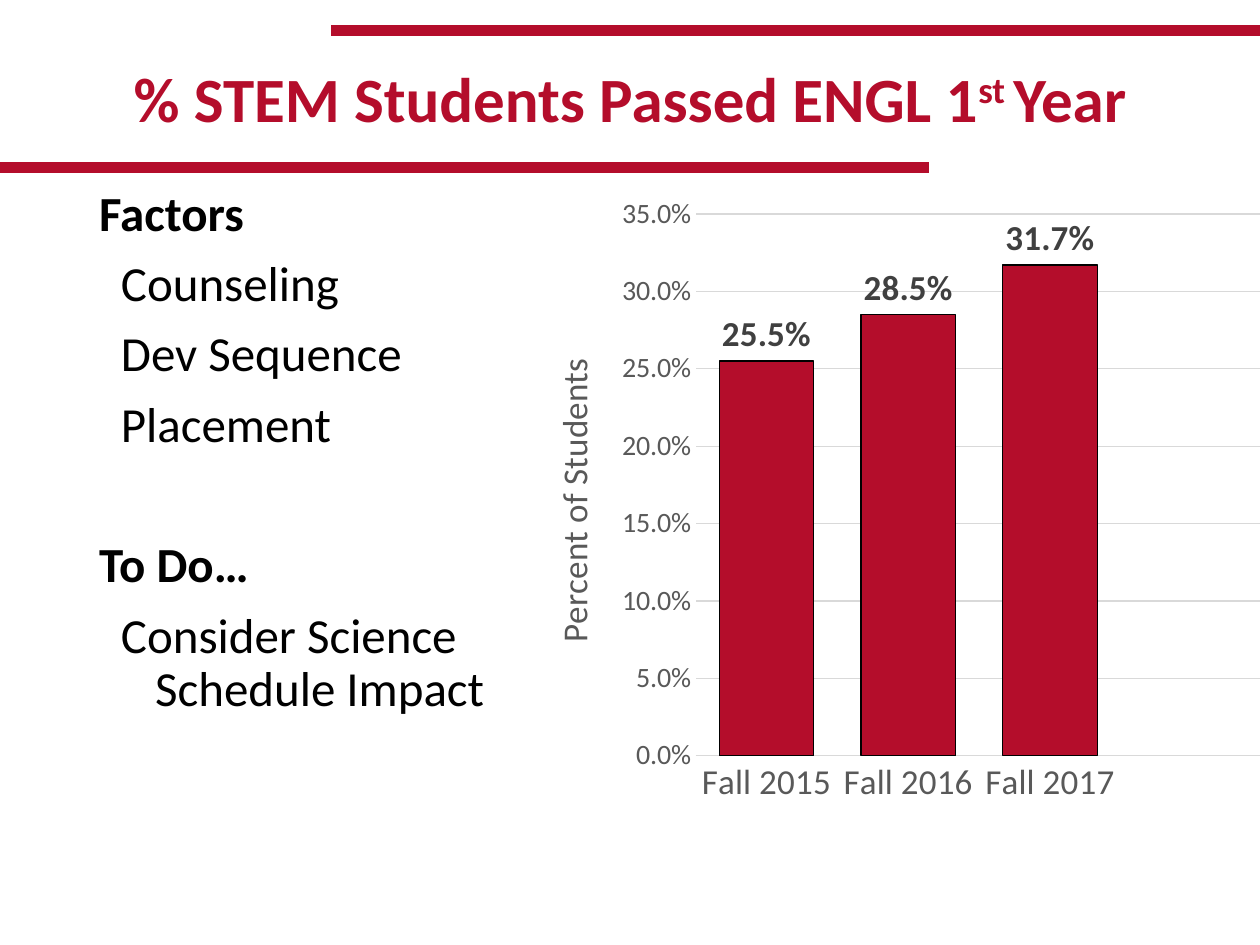
"""Build the slide on STEM students who passed English in their first year."""
from lxml import etree
from pptx import Presentation
from pptx import util as u
from pptx.chart import data
from pptx.dml import color
from pptx.enum import chart as ch, shapes, text
from pptx.oxml import ns

COLORS = {"red": "B40D2B", "black": "000000", "axis": "595959",
          "grid": "D9D9D9", "label": "404040"}


class Deck:
    FONT = "Calibri"

    def __init__(self, prs):
        self.prs = prs
        self.s = prs.slides.add_slide(prs.slide_layouts[5])

    def rgb(self, name):
        return color.RGBColor.from_string(COLORS[name])

    def set_all(self, target, **values):
        for name, value in values.items():
            setattr(target, name, value)

    def box(self, *lengths):
        return dict(zip(("left", "top", "width", "height"), map(u.Cm, lengths)))

    def font(self, f, size, name, bold=False):
        self.set_all(f, size=u.Pt(size), name=self.FONT, bold=bold)
        f.color.rgb = self.rgb(name)

    def line(self, ln, name, width):
        ln.color.rgb = self.rgb(name)
        ln.width = u.Pt(width)

    def frame(self, tf, anchor):
        self.set_all(tf, word_wrap=True, auto_size=text.MSO_AUTO_SIZE.NONE,
                     vertical_anchor=anchor)

    def bar(self, x1, x2, y):
        c = self.s.shapes.add_connector(shapes.MSO_CONNECTOR.STRAIGHT,
                                        *map(u.Cm, (x1, y, x2, y)))
        self.line(c.line, "red", 6)
        etree.SubElement(c._element.spPr, ns.qn("a:effectLst"))

    def title(self, runs, *lengths):
        sp = self.s.shapes.title
        self.set_all(sp, **self.box(*lengths))
        tf = sp.text_frame
        self.frame(tf, text.MSO_ANCHOR.MIDDLE)
        p = tf.paragraphs[0]
        self.set_all(p, alignment=text.PP_ALIGN.CENTER, line_spacing=0.9)
        for words, baseline in runs:
            r = p.add_run()
            r.text = words
            self.font(r.font, 36, "red", True)
            r._r.get_or_add_rPr().set("baseline", str(baseline))

    def outline(self, sections, *lengths):
        tf = self.s.shapes.add_textbox(**self.box(*lengths)).text_frame
        self.frame(tf, text.MSO_ANCHOR.TOP)
        p = tf.paragraphs[0]
        for i, (heading, items) in enumerate(sections):
            for j, words in enumerate([heading, *items]):
                if i or j:
                    p = tf.add_paragraph()
                p.text = words
                new_section = i and not j
                self.set_all(p, line_spacing=0.9,
                             space_before=u.Pt(50 if new_section else 10))
                self.font(p.font, 28, "black", not j)
                for r in p.runs:
                    self.font(r.font, 28, "black", not j)
                if j:
                    pPr = p._p.get_or_add_pPr()
                    pPr.set("marL", str(u.Cm(1.13)))
                    pPr.set("indent", str(u.Cm(-0.69)))

    def columns(self, categories, values, axis_title, *lengths):
        cd = data.CategoryChartData(number_format="0.0%")
        cd.categories = categories
        cd.add_series("Series 1", values)
        chart = self.s.shapes.add_chart(ch.XL_CHART_TYPE.COLUMN_CLUSTERED,
                                        chart_data=cd, **dict(zip(
                                            ("x", "y", "cx", "cy"),
                                            map(u.Cm, lengths)))).chart
        self.set_all(chart, has_legend=False, has_title=False)
        self.font(chart.font, 10, "black")
        plot = chart.plots[0]
        self.set_all(plot, gap_width=50, overlap=-6, vary_by_categories=False,
                     has_data_labels=True)
        self.set_all(plot.data_labels, show_value=True, number_format="0.0%",
                     number_format_is_linked=False,
                     position=ch.XL_LABEL_POSITION.OUTSIDE_END)
        self.font(plot.data_labels.font, 20, "label", True)
        fmt = plot.series[0].format
        fmt.fill.solid()
        fmt.fill.fore_color.rgb = self.rgb("red")
        self.line(fmt.line, "black", 0.75)
        cat, val = chart.category_axis, chart.value_axis
        for axis, size in ((cat, 20), (val, 16)):
            self.set_all(axis, major_tick_mark=ch.XL_TICK_MARK.NONE,
                         minor_tick_mark=ch.XL_TICK_MARK.NONE)
            self.font(axis.tick_labels.font, size, "axis")
        self.line(cat.format.line, "grid", 0.75)
        self.set_all(val, minimum_scale=0, maximum_scale=0.35, major_unit=0.05,
                     has_major_gridlines=True)
        self.set_all(val.tick_labels, number_format="0.0%",
                     number_format_is_linked=False)
        val.format.line.fill.background()
        self.line(val.major_gridlines.format.line, "grid", 0.75)
        tf = val.axis_title.text_frame
        tf.text = axis_title
        self.font(tf.paragraphs[0].runs[0].font, 20, "axis")
        self.plot_area(chart, x=0.23, y=0.05, w=0.75, h=0.86)

    def plot_area(self, chart, **fractions):
        area = chart._chartSpace.chart.plotArea
        for old in area.findall(ns.qn("c:layout")):
            area.remove(old)
        layout = etree.Element(ns.qn("c:layout"))
        manual = etree.SubElement(layout, ns.qn("c:manualLayout"))
        values = {"layoutTarget": "inner", "xMode": "edge", "yMode": "edge", **fractions}
        for tag, value in values.items():
            etree.SubElement(manual, ns.qn(f"c:{tag}")).set("val", str(value))
        area.insert(0, layout)


def main():
    prs = Presentation()
    prs.slide_width, prs.slide_height = u.Cm(25.4), u.Cm(19.05)
    deck = Deck(prs)
    deck.bar(0, 18.72, 3.38)
    deck.bar(6.68, 25.4, 0.61)
    deck.title([("% STEM Students Passed ENGL 1", 0), ("st ", 30000), ("Year", 0)],
               1.75, 1.02, 21.9, 2.06)
    deck.outline([("Factors", ["Counseling", "Dev Sequence", "Placement"]),
                  ("To Do…", ["Consider Science\vSchedule Impact"])],
                 1.75, 3.68, 21.9, 13.46)
    deck.columns(["Fall 2015", "Fall 2016", "Fall 2017", ""],
                 [0.255, 0.285, 0.317, None], "Percent of Students",
                 10.52, 3.68, 15.24, 12.7)
    prs.save("out.pptx")


if __name__ == "__main__":
    main()
